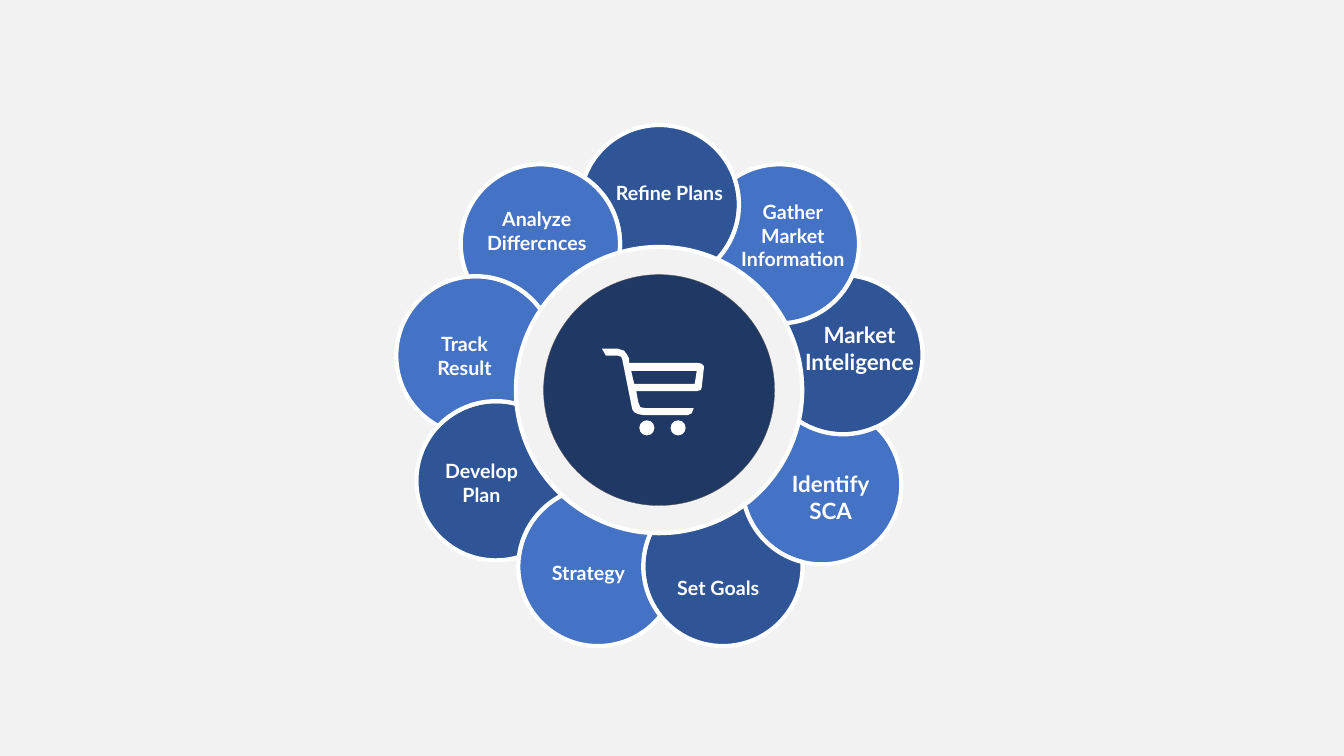
from dataclasses import dataclass
from math import acos, atan2, ceil, cos, degrees, dist, floor, radians, sin, tan
from typing import NamedTuple

from lxml.etree import SubElement
from pptx import Presentation
from pptx.dml.color import RGBColor
from pptx.enum.shapes import MSO_SHAPE as Preset
from pptx.enum.text import MSO_ANCHOR as Anchor, MSO_AUTO_SIZE as AutoSize, PP_ALIGN as Align
from pptx.oxml.ns import qn
from pptx.util import Inches, Pt


@dataclass(frozen=True)
class Theme:
    background: str = "F2F2F2"
    core: str = "203864"
    core_line: str = "595959"
    dark: str = "2F5597"
    light: str = "4472C4"
    white: str = "FFFFFF"
    font: str = "Lato"
    normal: int = 14
    large: int = 16


class Point(NamedTuple):
    x: float
    y: float


class Circle(NamedTuple):
    center: Point
    radius: float


@dataclass(frozen=True)
class Petal:
    """Fill, circle center and label; places are in percent of the slide."""
    fill: str
    center: Point
    lines: tuple[str, ...]
    label: Point
    width: float
    height: float
    size: int


THEME = Theme()
DARK, LIGHT, NORMAL, LARGE = THEME.dark, THEME.light, THEME.normal, THEME.large

# Petals clockwise from the top
PETALS = [
    Petal(DARK, Point(49.06, 27.07), ("Refine Plans",), Point(49.81, 25.5), 10.6, 4.5, NORMAL),
    Petal(LIGHT, Point(57.99, 32.27), ("Gather", "Market", "Information"),
          Point(59, 31.15), 9.7, 10.8, NORMAL),
    Petal(DARK, Point(62.72, 46.93), ("Market", "Inteligence"),
          Point(63.95, 46), 10.9, 8.5, LARGE),
    Petal(LIGHT, Point(61.14, 64.13), ("Identify", "SCA"), Point(61.81, 65.7), 8.5, 8.5, LARGE),
    Petal(DARK, Point(53.79, 74.93), ("Set Goals",), Point(53.45, 77.7), 11.2, 4.5, NORMAL),
    Petal(LIGHT, Point(44.49, 74.93), ("Strategy",), Point(43.79, 75.7), 7.3, 4.5, NORMAL),
    Petal(DARK, Point(36.91, 63.6), ("Develop Plan",), Point(35.83, 63.85), 9.45, 7.6, NORMAL),
    Petal(LIGHT, Point(35.41, 47.07), ("Track", "Result"), Point(34.56, 47.05), 6.75, 7.6, NORMAL),
    Petal(LIGHT, Point(40.21, 32.27), ("Analyze", "Differcnces"),
          Point(39.94, 30.5), 9.1, 7.6, NORMAL),
]

# Slide
presentation = Presentation()
presentation.slide_width, presentation.slide_height = Inches(13.33), Inches(7.5)
slide = presentation.slides.add_slide(presentation.slide_layouts[6])
slide.background.fill.solid()
slide.background.fill.fore_color.rgb = RGBColor.from_string(THEME.background)


def across(percent: float) -> float:
    return presentation.slide_width * percent / 100


def down(percent: float) -> float:
    return presentation.slide_height * percent / 100


def place(share: Point) -> Point:
    return Point(across(share.x), down(share.y))


# Flower circles: radii are percent of the slide's height
MIDDLE = place(Point(49.04, 51.6))
HUB, CORE = Circle(MIDDLE, down(18.93)), Circle(MIDDLE, down(15.27))
PETAL_CIRCLES = [Circle(place(petal.center), down(10.53)) for petal in PETALS]

# Cart: a grid of cells, each a share of the slide's height
CART = place(Point(44.79, 46.13))
CELL = presentation.slide_height / 750
CART_BODY = [
    (99, 15), (95, 14), (27, 14), (27, 10), (25, 6), (22, 2), (16, 0), (0, 0), (4, 7), (16, 7),
    (19, 8), (20, 10), (30, 60), (32, 63), (36, 65), (42, 66), (85, 66), (89, 64), (91, 59),
    (43, 59), (38, 58), (36, 53), (34, 42), (94, 42), (98, 41), (99, 38), (101, 20), (101, 17),
]
CART_WINDOW = [(92, 35), (32, 35), (29, 22), (94, 22)]
CART_WHEELS = [(44.5, 78.5), (75.5, 78.5)]
WHEEL_RADIUS = 7.5 * CELL


def polar(center: Point, radius: float, bearing: float) -> Point:
    """Point at a bearing in degrees, clockwise from the top."""
    angle = radians(bearing)
    return Point(center.x + radius * sin(angle), center.y - radius * cos(angle))


def bearing_to(start: Point, end: Point) -> float:
    return degrees(atan2(end.x - start.x, start.y - end.y))


def crossing(first: Circle, second: Circle, side: int) -> Point:
    """Where two circles meet, clockwise (1) or counterclockwise (-1) seen from the first."""
    gap = dist(first.center, second.center)
    spread = degrees(acos((first.radius**2 + gap**2 - second.radius**2)
                          / (2 * first.radius * gap)))
    return polar(first.center, first.radius,
                 bearing_to(first.center, second.center) + side * spread)


def arc(circle: Circle, start: Point, end: Point, direction: int) -> list[Point]:
    """Bezier points after start, three a curve, split at the quarters of the circle."""
    center, radius = circle
    first = bearing_to(center, start)
    last = first + direction * ((bearing_to(center, end) - first) * direction % 360)
    low, high = sorted((first, last))
    quarters = [90 * n for n in range(ceil(low / 90), floor(high / 90) + 1)]
    stops = [first, *quarters[::direction], last]
    points = []
    for here, there in zip(stops, stops[1:]):
        handle = radius * 4 / 3 * tan(radians(there - here) / 4)
        target = polar(center, radius, there)
        points += [polar(polar(center, radius, here), handle, here + 90),
                   polar(target, -handle, there + 90), target]
    return points


def petal_outline(index: int) -> list[Point]:
    """A circle less the hub and less the circle before it."""
    petal, previous = PETAL_CIRCLES[index], PETAL_CIRCLES[index - 1]
    outer = crossing(previous, petal, -1)
    inner, inner_previous = crossing(HUB, petal, 1), crossing(HUB, previous, 1)
    return [outer, *arc(petal, outer, inner, 1), *arc(HUB, inner, inner_previous, -1),
            *arc(previous, inner_previous, outer, -1)]


def paint(shape, fill: str, line: str | None = None, weight: float = 0) -> None:
    shape.shadow.inherit = False
    shape.fill.solid()
    shape.fill.fore_color.rgb = RGBColor.from_string(fill)
    if line:
        shape.line.color.rgb = RGBColor.from_string(line)
        shape.line.width = Pt(weight)
    else:
        shape.line.fill.background()


def add_circle(circle: Circle, fill: str, line: str | None = None, weight: float = 0) -> None:
    center, radius = circle
    box = (center.x - radius, center.y - radius, 2 * radius, 2 * radius)
    paint(slide.shapes.add_shape(Preset.OVAL, *map(round, box)), fill, line, weight)


def add_outline(*contours: list[Point]):
    first, *others = contours
    builder = slide.shapes.build_freeform(round(first[0].x), round(first[0].y))
    builder.add_line_segments(first[1:], close=True)
    for contour in others:
        builder.move_to(*contour[0])
        builder.add_line_segments(contour[1:], close=True)
    return builder.convert_to_shape()


def bend(shape) -> None:
    """Turn each three straight segments into one Bezier curve."""
    outline = next(shape.element.iter(qn("a:path")))
    segments = outline.findall(qn("a:lnTo"))
    for trio in zip(*[iter(segments)] * 3):
        curve = SubElement(outline, qn("a:cubicBezTo"))
        trio[0].addprevious(curve)
        for segment in trio:
            curve.append(segment[0])
            outline.remove(segment)


def add_label(petal: Petal) -> None:
    corner = Point(petal.label.x - petal.width / 2, petal.label.y - petal.height / 2)
    box = (*place(corner), across(petal.width), down(petal.height))
    frame = slide.shapes.add_textbox(*map(round, box)).text_frame
    frame.text = "\n".join(petal.lines)
    frame_format = {"word_wrap": True, "vertical_anchor": Anchor.MIDDLE,
                    "auto_size": AutoSize.SHAPE_TO_FIT_TEXT}
    font_format = {"name": THEME.font, "size": Pt(petal.size), "bold": True}
    for name, value in frame_format.items():
        setattr(frame, name, value)
    for paragraph in frame.paragraphs:
        paragraph.alignment = Align.CENTER
        font = paragraph.runs[0].font
        for name, value in font_format.items():
            setattr(font, name, value)
        font.color.rgb = RGBColor.from_string(THEME.white)


def cart_point(cell: tuple[float, float]) -> Point:
    return Point(CART.x + cell[0] * CELL, CART.y + cell[1] * CELL)


def main() -> None:
    # Core and petals
    add_circle(CORE, THEME.core, THEME.core_line, 0.25)
    for index, petal in enumerate(PETALS):
        shape = add_outline(petal_outline(index))
        bend(shape)
        paint(shape, petal.fill, THEME.white, 3)
    # Labels
    for petal in PETALS:
        add_label(petal)
    # Shopping cart
    for wheel in CART_WHEELS:
        add_circle(Circle(cart_point(wheel), WHEEL_RADIUS), THEME.white)
    cart = add_outline(*([cart_point(cell) for cell in part] for part in (CART_BODY, CART_WINDOW)))
    paint(cart, THEME.white)
    presentation.save("out.pptx")


if __name__ == "__main__":
    main()
